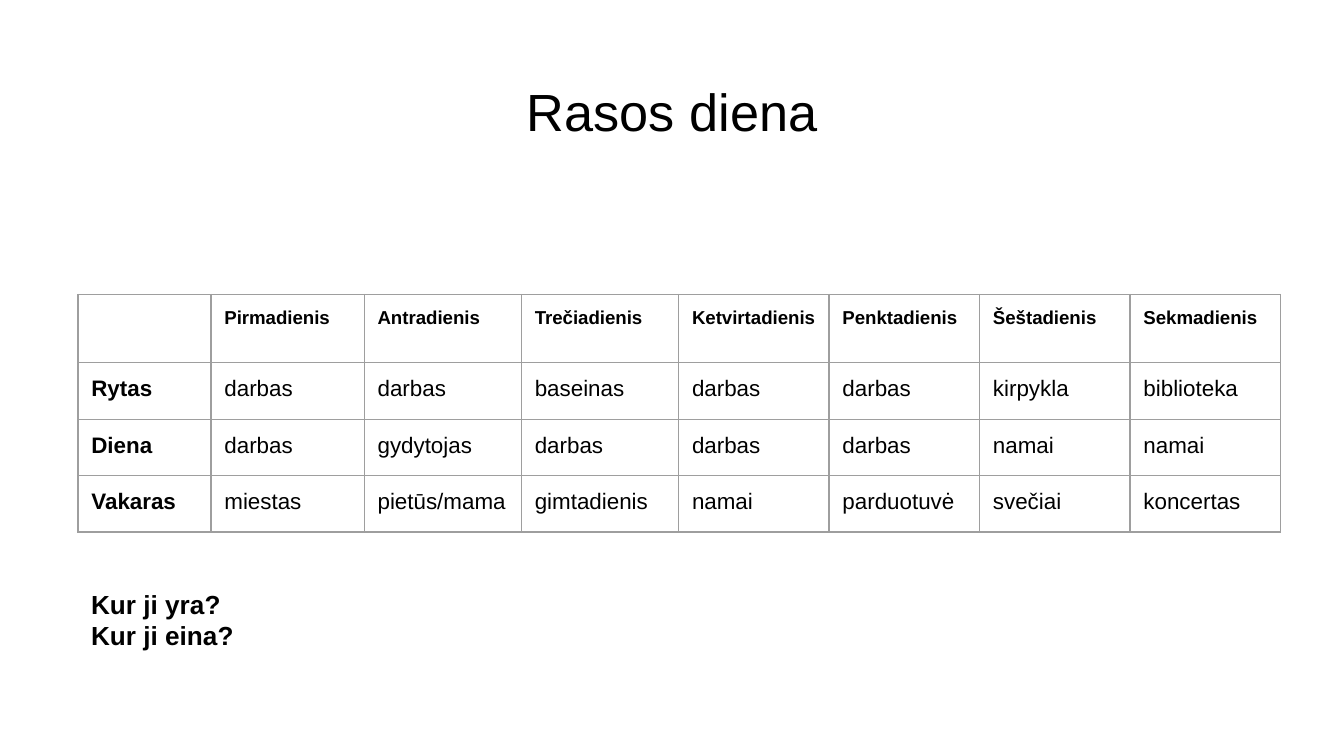
from lxml import etree
from pptx import Presentation
from pptx.dml.color import RGBColor
from pptx.enum.text import MSO_ANCHOR, MSO_AUTO_SIZE, PP_ALIGN
from pptx.oxml.ns import qn
from pptx.util import Inches, Pt

BLACK = RGBColor(0x00, 0x00, 0x00)
WHITE = RGBColor(0xFF, 0xFF, 0xFF)
GRID = RGBColor(0x9E, 0x9E, 0x9E)
TOP = MSO_ANCHOR.TOP
CENTER = PP_ALIGN.CENTER
NO_FIT = MSO_AUTO_SIZE.NONE
GROW = MSO_AUTO_SIZE.SHAPE_TO_FIT_TEXT
FONT = "Arial"
TITLE_ONLY = 5
LEFT, WIDTH = 0.58, 8.94

COL_WIDTHS = [0.99, 1.14, 1.17, 1.17, 1.12, 1.12, 1.12, 1.12]
ROW_HEIGHTS = [0.51, 0.42, 0.42, 0.42]
SCHEDULE = [
    ["", "Pirmadienis", "Antradienis", "Trečiadienis", "Ketvirtadienis",
     "Penktadienis", "Šeštadienis", "Sekmadienis"],
    ["Rytas", "darbas", "darbas", "baseinas", "darbas",
     "darbas", "kirpykla", "biblioteka"],
    ["Diena", "darbas", "gydytojas", "darbas", "darbas",
     "darbas", "namai", "namai"],
    ["Vakaras", "miestas", "pietūs/mama", "gimtadienis", "namai",
     "parduotuvė", "svečiai", "koncertas"],
]
QUESTIONS = ["Kur ji yra?", "Kur ji eina?"]


def style_paragraph(p, size, bold=False):
    p.font.name = FONT
    p.font.size = Pt(size)
    p.font.bold = bold
    p.font.color.rgb = BLACK


def set_margins(frame, margin=0.1):
    frame.margin_left = frame.margin_right = Inches(margin)
    frame.margin_top = frame.margin_bottom = Inches(margin)


def set_borders(cell):
    tc_pr = cell._tc.get_or_add_tcPr()
    # Border lines come before the fill in the cell properties
    for i, side in enumerate(("a:lnL", "a:lnR", "a:lnT", "a:lnB")):
        ln = etree.Element(qn(side), w=str(Pt(0.75)))
        fill = etree.SubElement(ln, qn("a:solidFill"))
        etree.SubElement(fill, qn("a:srgbClr"), val=str(GRID))
        tc_pr.insert(i, ln)


def add_title(s, text):
    sp = s.shapes.title
    sp.left, sp.top = Inches(0.34), Inches(0.49)
    sp.width, sp.height = Inches(9.32), Inches(0.63)
    tf = sp.text_frame
    tf.text = text
    tf.vertical_anchor = TOP
    tf.auto_size = NO_FIT
    set_margins(tf)
    p = tf.paragraphs[0]
    p.alignment = CENTER
    style_paragraph(p, 28)


def add_schedule(s):
    table = s.shapes.add_table(
        len(SCHEDULE), len(COL_WIDTHS), Inches(LEFT), Inches(2.19),
        Inches(WIDTH), Inches(sum(ROW_HEIGHTS))).table
    table.horz_banding = False
    for column, width in zip(table.columns, COL_WIDTHS):
        column.width = Inches(width)
    for row, height in zip(table.rows, ROW_HEIGHTS):
        row.height = Inches(height)
    for r, texts in enumerate(SCHEDULE):
        for c, text in enumerate(texts):
            cell = table.cell(r, c)
            cell.text = text
            cell.fill.solid()
            cell.fill.fore_color.rgb = WHITE
            set_margins(cell)
            set_borders(cell)
            style_paragraph(cell.text_frame.paragraphs[0],
                            10 if r == 0 else 12, bold=r == 0 or c == 0)


def add_questions(s):
    sp = s.shapes.add_textbox(Inches(LEFT), Inches(4.33),
                              Inches(WIDTH), Inches(0.57))
    tf = sp.text_frame
    tf.word_wrap = True
    tf.auto_size = GROW
    tf.text = "\n".join(QUESTIONS)
    for p in tf.paragraphs:
        style_paragraph(p, 14, bold=True)


def main():
    prs = Presentation()
    # Widescreen, 16:9
    prs.slide_width = Inches(10)
    prs.slide_height = Inches(10 * 9 / 16)
    s = prs.slides.add_slide(prs.slide_layouts[TITLE_ONLY])
    add_title(s, "Rasos diena")
    add_schedule(s)
    add_questions(s)
    prs.save("out.pptx")


if __name__ == "__main__":
    main()
